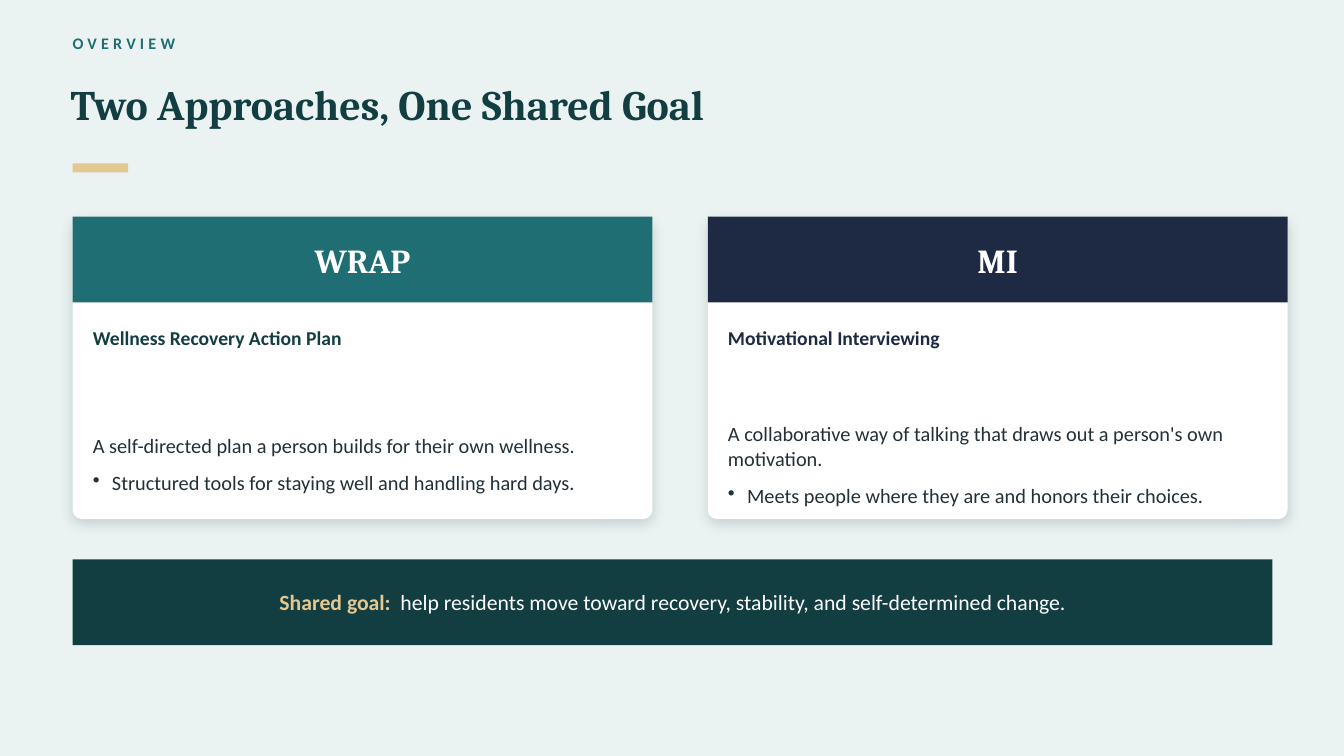
from lxml import etree
from pptx import Presentation
from pptx import util as u
from pptx.dml.color import RGBColor
from pptx.enum import shapes, text
from pptx.oxml import ns

PX = 9144  # EMU per px, 100 px to the inch

MIST = RGBColor(0xEA, 0xF3, 0xF2)
TEAL = RGBColor(0x1F, 0x6E, 0x73)
PINE = RGBColor(0x12, 0x3E, 0x42)
SAND = RGBColor(0xE4, 0xC8, 0x92)
NAVY = RGBColor(0x1E, 0x2A, 0x44)
INK = RGBColor(0x22, 0x30, 0x38)
SHADE = RGBColor(0x1A, 0x30, 0x33)
WHITE = RGBColor(0xFF, 0xFF, 0xFF)

HEAD = "Cambria"
BODY = "Calibri"
CENTER = text.PP_ALIGN.CENTER
RECT = shapes.MSO_SHAPE.RECTANGLE
ROUND = shapes.MSO_SHAPE.ROUNDED_RECTANGLE


def node(up, tag, **attrs):
    return etree.SubElement(up, ns.qn(tag), {k: str(v) for k, v in attrs.items()})


class Deck:
    def __init__(self, width, height):
        self.prs = Presentation()
        self.prs.slide_width = width * PX
        self.prs.slide_height = height * PX
        self.slide = self.prs.slides.add_slide(self.prs.slide_layouts[6])
        fill = self.slide.background.fill
        fill.solid()
        fill.fore_color.rgb = MIST

    def block(self, x, y, w, h, color, kind=RECT):
        shape = self.slide.shapes.add_shape(kind, x * PX, y * PX, w * PX, h * PX)
        shape.shadow.inherit = False
        shape.fill.solid()
        shape.fill.fore_color.rgb = color
        shape.line.fill.background()
        return shape

    def panel(self, x, y, w, h):
        """White rounded panel with a soft shadow below it."""
        shape = self.block(x, y, w, h, WHITE, ROUND)
        shape.adjustments[0] = 0.03
        effects = shape._element.spPr.find(ns.qn("a:effectLst"))
        outer = node(effects, "a:outerShdw", blurRad=u.Pt(9), dist=u.Pt(3),
                     dir=90 * 60000, algn="ctr", rotWithShape=0)
        tint = node(outer, "a:srgbClr", val=SHADE)
        node(tint, "a:alpha", val=18000)

    def frame(self, shape):
        frame = shape.text_frame
        frame.word_wrap = True
        frame.vertical_anchor = text.MSO_ANCHOR.MIDDLE
        frame.margin_left = frame.margin_right = 0
        frame.margin_top = frame.margin_bottom = 0
        return frame

    def box(self, x, y, w, h):
        return self.slide.shapes.add_textbox(x * PX, y * PX, w * PX, h * PX)

    def style(self, run, size, color, bold=False, face=BODY, gap=0):
        font = run.font
        font.size = u.Pt(size)
        font.name = face
        font.bold = bold
        font.color.rgb = color
        if gap:
            run._r.get_or_add_rPr().set("spc", str(int(gap * 100)))

    def label(self, shape, words, size, color, face=BODY, align=None, gap=0):
        """One bold line of text."""
        para = self.frame(shape).paragraphs[0]
        para.text = words
        para.alignment = align
        self.style(para.runs[0], size, color, True, face, gap)

    def notes(self, x, y, w, h, lead, point):
        """A lead sentence followed by one bulleted point."""
        frame = self.frame(self.box(x, y, w, h))
        frame.text = lead + "\n" + point
        props = frame.paragraphs[1]._p.get_or_add_pPr()
        props.set("marL", str(19 * PX))
        props.set("indent", str(-19 * PX))
        node(props, "a:buChar", char="•")
        for para in frame.paragraphs:
            para.line_spacing = 1.05
            para.space_after = u.Pt(8)
            self.style(para.runs[0], 14.5, INK)

    def card(self, x, y, color, accent, short, name, lead, point):
        self.panel(x, y, 575, 300)
        band = self.block(x, y, 575, 85, color)
        self.label(band, short, 24, WHITE, HEAD, CENTER)
        self.label(self.box(x + 20, y + 100, 535, 40), name, 14, accent)
        self.notes(x + 20, y + 150, 525, 190, lead, point)

    def banner(self, x, y, w, h, term, claim):
        para = self.frame(self.block(x, y, w, h, PINE)).paragraphs[0]
        para.alignment = CENTER
        # The space between the two parts is widened by its tracking
        for words, color, bold, gap in ((term, SAND, True, 0), (" ", SAND, True, 3.5),
                                        (claim, WHITE, False, 0)):
            run = para.add_run()
            run.text = words
            self.style(run, 15.5, color, bold, gap=gap)


CARDS = (
    (TEAL, PINE, "WRAP", "Wellness Recovery Action Plan",
     "A self-directed plan a person builds for their own wellness.",
     "Structured tools for staying well and handling hard days."),
    (NAVY, NAVY, "MI", "Motivational Interviewing",
     "A collaborative way of talking that draws out a person's own motivation.",
     "Meets people where they are and honors their choices."),
)


def main():
    deck = Deck(1333, 750)

    # Heading
    deck.label(deck.box(72, 28, 1100, 30), "OVERVIEW", 11.5, TEAL, gap=3)
    deck.label(deck.box(70, 55, 1200, 95), "Two Approaches, One Shared Goal",
               30, PINE, HEAD)
    deck.block(72, 162, 55, 9, SAND)

    # Two approaches side by side
    for i, card in enumerate(CARDS):
        deck.card(72 + i * 630, 215, *card)

    # Shared goal
    deck.banner(72, 555, 1190, 85, "Shared goal:",
                "help residents move toward recovery, stability, "
                "and self-determined change.")

    deck.prs.save("out.pptx")


if __name__ == "__main__":
    main()
